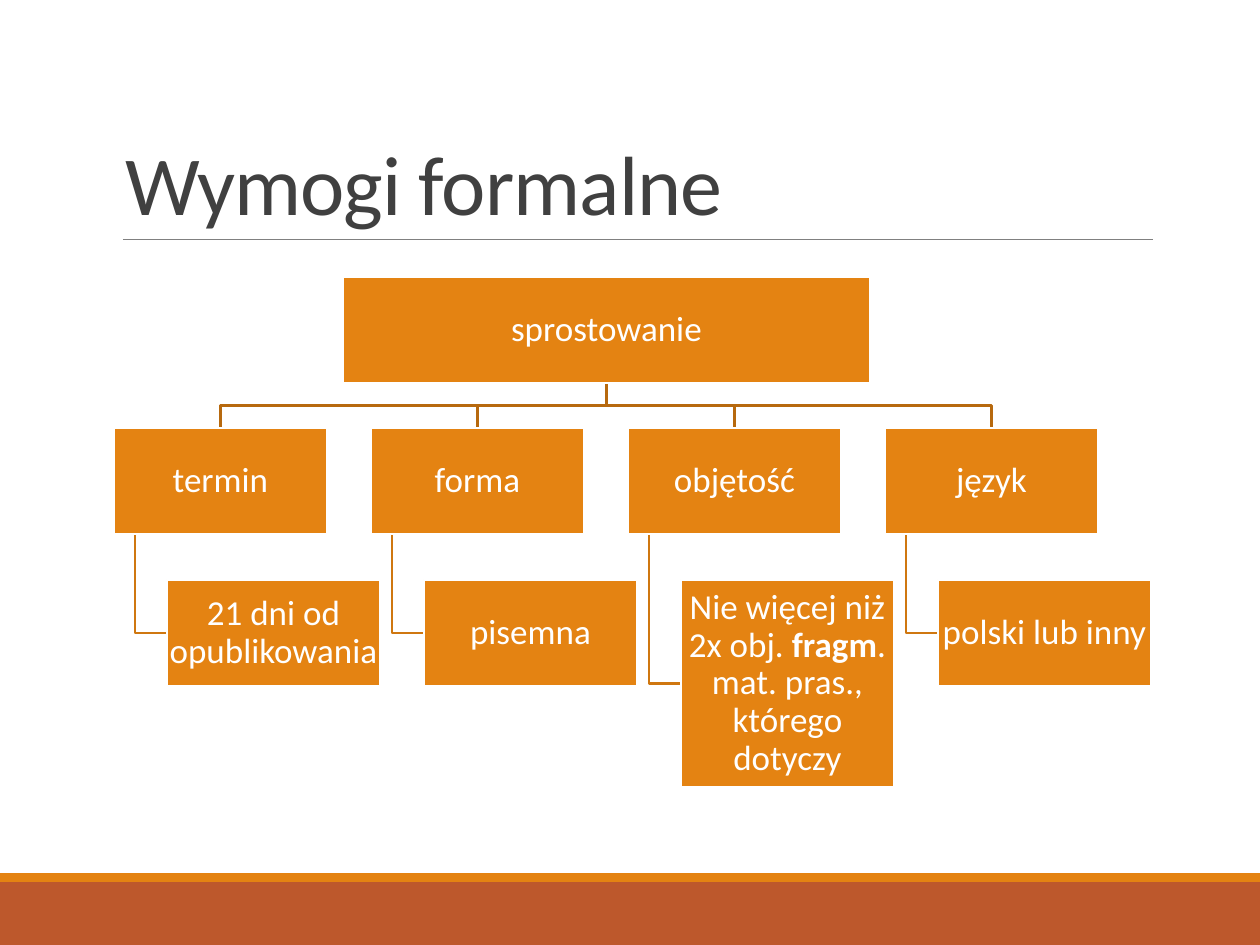
from pptx import Presentation
from pptx.dml.color import RGBColor
from pptx.enum.shapes import MSO_CONNECTOR, MSO_SHAPE
from pptx.enum.text import MSO_ANCHOR, PP_ALIGN
from pptx.oxml import parse_xml
from pptx.oxml.ns import nsdecls
from pptx.util import Pt

RECT, STRAIGHT = MSO_SHAPE.RECTANGLE, MSO_CONNECTOR.STRAIGHT
MIDDLE, BOTTOM, CENTER = MSO_ANCHOR.MIDDLE, MSO_ANCHOR.BOTTOM, PP_ALIGN.CENTER

ORANGE = RGBColor(0xE4, 0x83, 0x12)
RUST = RGBColor(0xBD, 0x58, 0x2C)
BRANCH_LINE = RGBColor(0xB7, 0x69, 0x0E)
LEAF_LINE = RGBColor(0xCF, 0x77, 0x10)
GRAY = RGBColor(0x80, 0x80, 0x80)
DARK = RGBColor(0x40, 0x40, 0x40)
WHITE = RGBColor(0xFF, 0xFF, 0xFF)
FONT = "Calibri"

# Content: text runs are (text, bold)
TITLE = "Wymogi formalne"
ROOT = "sprostowanie"
BOX_H, TALL_H = 106, 207
BRANCHES = [  # heading, leaf runs, leaf height
    ("termin", [("21 dni od opublikowania", False)], BOX_H),
    ("forma", [("pisemna", False)], BOX_H),
    ("objętość", [("Nie więcej niż 2x obj. ", False), ("fragm", True),
                  (". mat. pras., którego dotyczy", False)], TALL_H),
    ("język", [("polski lub inny", False)], BOX_H),
]

# Layout in px
SLIDE_W, SLIDE_H = 1260, 945
BOX_W, PITCH, LEFT = 213, 257, 114
ROOT_X, ROOT_W = 343, 527
ROOT_Y, HEAD_Y, LEAF_Y = 277, 428, 580
LEAF_INDENT, STEM_INDENT = 53, 21


def px(n):
    return round(n * 914400 / 126)


prs = Presentation()
prs.slide_width, prs.slide_height = px(SLIDE_W), px(SLIDE_H)
s = prs.slides.add_slide(prs.slide_layouts[6])


def add_rect(x, y, w, h, fill):
    sp = s.shapes.add_shape(RECT, px(x), px(y), px(w), px(h))
    sp.shadow.inherit = False
    sp.fill.solid()
    sp.fill.fore_color.rgb = fill
    sp.line.fill.background()
    return sp


def add_run(p, text, size, color, bold=False):
    r = p.add_run()
    r.text = text
    r.font.name, r.font.size, r.font.bold = FONT, Pt(size), bold
    r.font.color.rgb = color
    return r


def add_box(x, y, w, h, runs):
    sp = add_rect(x, y, w, h, ORANGE)
    sp.line.color.rgb = WHITE
    sp.line.width = Pt(1.25)
    tf = sp.text_frame
    tf.word_wrap = True
    tf.vertical_anchor = MIDDLE
    tf.margin_left = tf.margin_right = tf.margin_top = tf.margin_bottom = px(1)
    p = tf.paragraphs[0]
    p.alignment = CENTER
    p.line_spacing = 0.9
    for text, bold in runs:
        add_run(p, text, 20, WHITE, bold)


def add_path(points, color):
    start, *rest = [(px(x), px(y)) for x, y in points]
    builder = s.shapes.build_freeform(*start)
    builder.add_line_segments(rest, close=False)
    sp = builder.convert_to_shape()
    sp.shadow.inherit = False
    sp.fill.background()
    sp.line.color.rgb = color
    sp.line.width = Pt(1.25)


# Footer bands and title rule
add_rect(0, 882, SLIDE_W, 63, RUST)
add_rect(0, 873, SLIDE_W, 9, ORANGE)
rule = s.shapes.add_connector(STRAIGHT, px(123), px(239), px(1153), px(239))
rule.line.color.rgb = GRAY
rule.line.width = Pt(0.5)
rule._element.spPr.append(parse_xml(f"<a:effectLst {nsdecls('a')}/>"))

# Title
tf = s.shapes.add_textbox(px(113), px(39), px(1040), px(200)).text_frame
tf.word_wrap = True
tf.vertical_anchor = BOTTOM
p = tf.paragraphs[0]
p.line_spacing = 0.85
r = add_run(p, TITLE, 48, DARK)
r.font._element.set("spc", "-50")

# Connecting lines
root_mid, root_bottom = ROOT_X + ROOT_W / 2, ROOT_Y + BOX_H
bus_y = (root_bottom + HEAD_Y) / 2
for i, (_, _, leaf_h) in enumerate(BRANCHES):
    x = LEFT + i * PITCH
    mid, stem, leaf_mid = x + BOX_W / 2, x + STEM_INDENT, LEAF_Y + leaf_h / 2
    add_path([(root_mid, root_bottom), (root_mid, bus_y),
              (mid, bus_y), (mid, HEAD_Y)], BRANCH_LINE)
    add_path([(stem, HEAD_Y + BOX_H), (stem, leaf_mid),
              (x + LEAF_INDENT, leaf_mid)], LEAF_LINE)

# Boxes
add_box(ROOT_X, ROOT_Y, ROOT_W, BOX_H, [(ROOT, False)])
for i, (heading, leaf, leaf_h) in enumerate(BRANCHES):
    x = LEFT + i * PITCH
    add_box(x, HEAD_Y, BOX_W, BOX_H, [(heading, False)])
    add_box(x + LEAF_INDENT, LEAF_Y, BOX_W, leaf_h, leaf)

prs.save("out.pptx")
